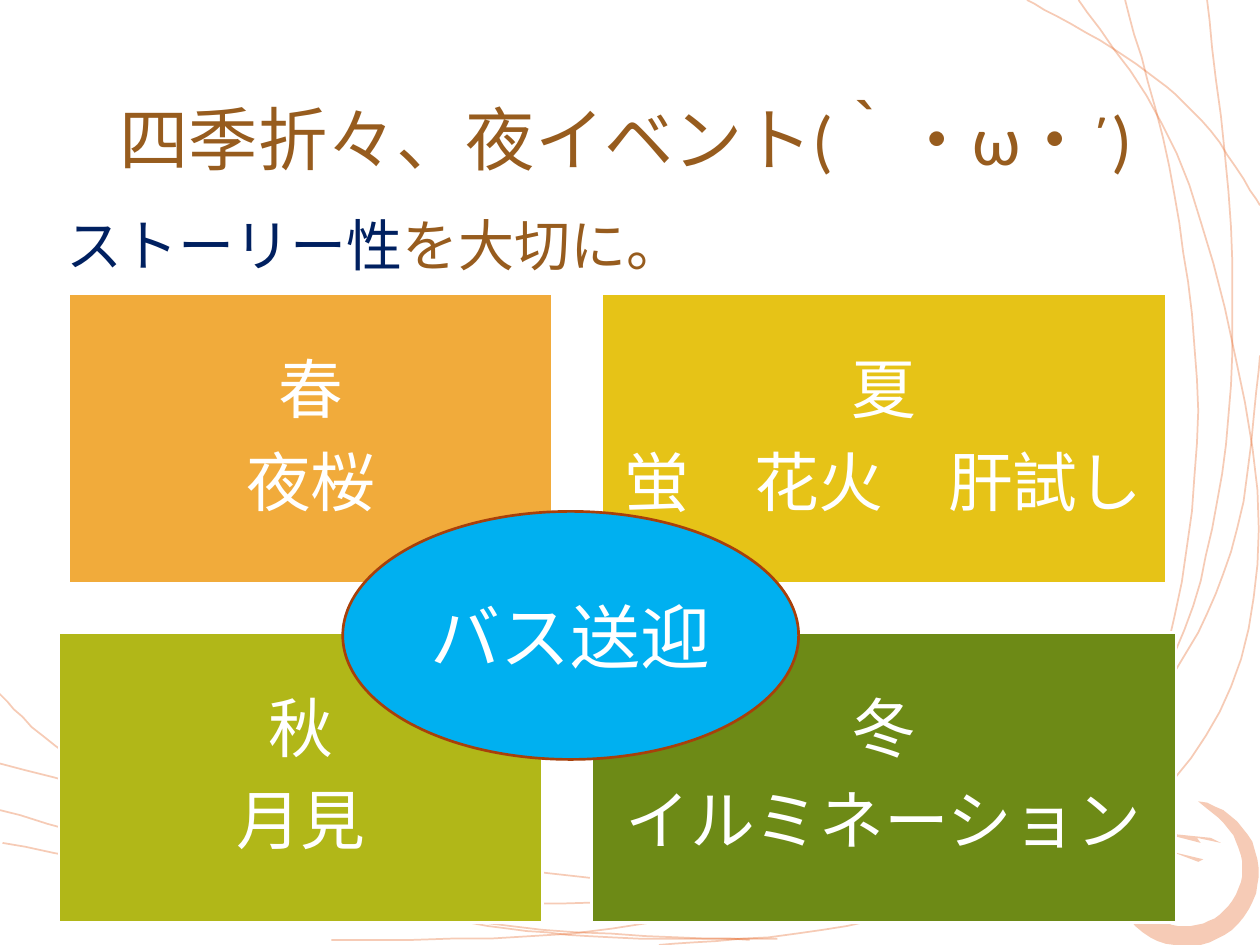
from dataclasses import dataclass
from math import cos, pi, radians, sin, sqrt

from lxml.etree import SubElement
from pptx import Presentation
from pptx.dml.color import RGBColor
from pptx.enum.shapes import MSO_SHAPE as Shape
from pptx.enum.text import MSO_ANCHOR as Anchor, PP_ALIGN as Align
from pptx.oxml.ns import qn
from pptx.util import Cm, Pt


@dataclass(frozen=True)
class Theme:
    font: str = "Calibri"
    brown: str = "975C1E"
    navy: str = "002060"
    white: str = "FFFFFF"
    swirl: str = "E3560E"
    bus_fill: str = "00B0F0"
    bus_line: str = "A8400A"
    title_size: float = 39.6
    body_size: float = 32
    tile_size: float = 37
    bus_size: float = 40
    border: float = 1.54
    curve_alpha: int = 29
    brush_alpha: int = 30


@dataclass(frozen=True)
class Tile:
    season: str
    event: str
    color: str
    width: float


THEME = Theme()
GRID_UNIT = Cm(0.0254)
CENTER_X, TILE_TOP, TILE_H, GAP = 12.45, 5.92, 5.85, 0.98

TILE_ROWS = [
    [Tile("春", "夜桜", "F1AB3B", 9.75), Tile("夏", "蛍　花火　肝試し", "E6C317", 11.38)],
    [Tile("秋", "月見", "B1B718", 9.75), Tile("冬", "イルミネーション", "6D8A16", 11.79)],
]

CURVES = [
    [(-3, 548), (55, 600), (185, 675), (338, 725), (467, 743), (617, 745)],
    [(523, 750), (672, 735), (813, 689), (911, 563), (950, 352), (932, 154), (893, 0)],
    [(0, 606), (248, 665), (582, 707), (798, 690), (945, 602), (999, 420), (944, 147), (856, 0)],
    [(2, 669), (237, 708), (516, 714), (749, 664), (908, 560), (977, 438), (1000, 282)],
    [(263, 746), (486, 737), (753, 675), (910, 555), (966, 398), (978, 207), (958, 0)],
    [(815, 0), (893, 45), (954, 96), (1000, 163)],
    [(0, 643), (211, 699), (405, 735), (595, 746)],
]
FLECKS = [
    [(922, 661), (961, 665), (969, 669), (950, 665), (953, 669)],
    [(930, 676), (955, 682), (951, 684)],
]


def rgb(color: str) -> RGBColor:
    return RGBColor.from_string(color)


def smooth_points(knots: list, steps: int = 8) -> list:
    padded = [knots[0], *knots, knots[-1]]
    points = [knots[0]]
    for a, b, c, d in zip(padded, padded[1:], padded[2:], padded[3:]):
        for i in range(1, steps + 1):
            t = i / steps
            points.append(tuple(
                q + t * ((r - p) + t * ((2 * p - 5 * q + 4 * r - s)
                                        + t * (3 * q - p - 3 * r + s))) / 2
                for p, q, r, s in zip(a, b, c, d)))
    return points


def brush_ring(cx: float, cy: float, radius: float, thickness: float, steps: int = 48) -> list:
    outer, inner = [], []
    for i in range(steps + 1):
        t = i / steps
        angle = radians(330 * t - 80)
        taper = thickness * sqrt(max(0, sin(pi * t)))
        for edge, r in ((outer, radius), (inner, radius - taper)):
            edge.append((cx + r * cos(angle), cy + r * sin(angle)))
    return outer + inner[::-1]


def draw_outline(s, points: list, *, closed: bool) -> None:
    builder = s.shapes.build_freeform(*points[0], scale=GRID_UNIT)
    builder.add_line_segments(points[1:], close=closed)
    sp = builder.convert_to_shape()
    sp.shadow.inherit = False
    if closed:
        sp.fill.solid()
        sp.fill.fore_color.rgb = rgb(THEME.swirl)
        sp.line.fill.background()
    else:
        sp.fill.background()
        sp.line.color.rgb = rgb(THEME.swirl)
        sp.line.width = Pt(1)
    alpha = THEME.brush_alpha if closed else THEME.curve_alpha
    for color in sp.element.spPr.iter(qn("a:srgbClr")):
        SubElement(color, qn("a:alpha")).set("val", str(alpha * 1000))


def write(p, text: str, *, size: float, color: str, align=Align.LEFT,
          before: float = 0, after: float = 0, spacing: float = 1.0) -> None:
    p.alignment = align
    p.space_before, p.space_after = Pt(before), Pt(after)
    p.line_spacing = spacing
    r = p.add_run()
    r.text = text
    r.font.name, r.font.size = THEME.font, Pt(size)
    r.font.color.rgb = rgb(color)


def add_panel(s, kind, left: float, top: float, width: float, height: float,
              fill: str, line: str):
    sp = s.shapes.add_shape(kind, Cm(left), Cm(top), Cm(width), Cm(height))
    sp.shadow.inherit = False
    sp.fill.solid()
    sp.fill.fore_color.rgb = rgb(fill)
    sp.line.color.rgb = rgb(line)
    sp.line.width = Pt(THEME.border)
    tf = sp.text_frame
    tf.word_wrap = True
    tf.vertical_anchor = Anchor.MIDDLE
    return tf


def add_box(s, left: float, top: float, width: float, height: float, anchor):
    tf = s.shapes.add_textbox(Cm(left), Cm(top), Cm(width), Cm(height)).text_frame
    tf.word_wrap = True
    tf.vertical_anchor = anchor
    return tf


def draw_tile(s, tile: Tile, left: float, top: float) -> None:
    tf = add_panel(s, Shape.RECTANGLE, left, top, tile.width, TILE_H, tile.color, THEME.white)
    tf.margin_left = tf.margin_right = tf.margin_top = tf.margin_bottom = Cm(0.38)
    for p, text in ((tf.paragraphs[0], tile.season), (tf.add_paragraph(), tile.event)):
        write(p, text, size=THEME.tile_size, color=THEME.white, align=Align.CENTER,
              after=13, spacing=0.9)


def main() -> None:
    prs = Presentation()
    prs.slide_width, prs.slide_height = Cm(25.4), Cm(19.05)
    s = prs.slides.add_slide(prs.slide_layouts[6])

    for knots in CURVES:
        draw_outline(s, smooth_points(knots), closed=False)
    for points in [brush_ring(941, 693, 58, 16), *FLECKS]:
        draw_outline(s, points, closed=True)

    title = add_box(s, 1.19, 1.19, 22.86, 3.18, Anchor.MIDDLE)
    write(title.paragraphs[0], "四季折々、夜イベント(｀・ω・´)", size=THEME.title_size,
          color=THEME.brown, align=Align.CENTER)

    body = add_box(s, 1.09, 4.11, 22.86, 13.03, Anchor.TOP)
    for text, color in (("ストーリー性", THEME.navy), ("を大切に。", THEME.brown)):
        write(body.paragraphs[0], text, size=THEME.body_size, color=color, before=6.4)

    for i, row in enumerate(TILE_ROWS):
        left = CENTER_X - (sum(tile.width for tile in row) + GAP) / 2
        for tile in row:
            draw_tile(s, tile, left, TILE_TOP + i * (TILE_H + GAP))
            left += tile.width + GAP

    bus = add_panel(s, Shape.OVAL, 6.91, 10.31, 9.19, 5, THEME.bus_fill, THEME.bus_line)
    write(bus.paragraphs[0], "バス送迎", size=THEME.bus_size, color=THEME.white,
          align=Align.CENTER)

    prs.save("out.pptx")


if __name__ == "__main__":
    main()
